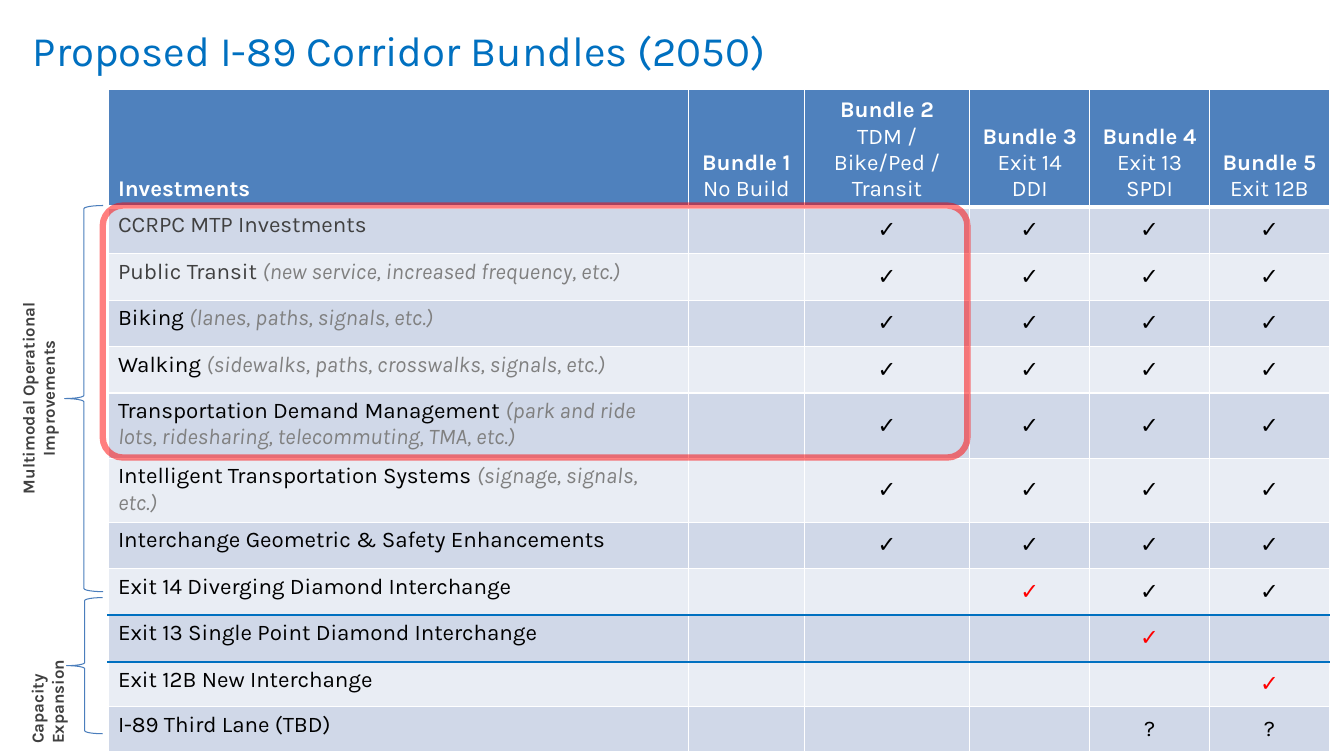
from lxml.etree import SubElement
from pptx import Presentation
from pptx.dml.color import RGBColor
from pptx.enum.shapes import MSO_SHAPE as Preset
from pptx.enum.text import MSO_ANCHOR as Anchor, MSO_AUTO_SIZE as AutoSize, PP_ALIGN as Align
from pptx.oxml.ns import qn
from pptx.util import Cm, Pt

WHITE = RGBColor(0xFF, 0xFF, 0xFF)
BLACK = RGBColor(0x00, 0x00, 0x00)
DARK = RGBColor(0x40, 0x40, 0x40)
GRAY = RGBColor(0x80, 0x80, 0x80)
RED = RGBColor(0xFF, 0x00, 0x00)
BLUE = RGBColor(0x00, 0x70, 0xC0)
HEADER = RGBColor(0x4F, 0x81, 0xBD)
BANDS = RGBColor(0xD0, 0xD8, 0xE8), RGBColor(0xE9, 0xED, 0xF4)
BRACE = RGBColor(0x4B, 0x7E, 0xBC)


def add_span(para, text, color, **formats):
    span = para.add_run()
    span.text = text
    span.font.color.rgb = color
    settings = {"name": "Karla", "size": Pt(16), "bold": False, "italic": False}
    for name, value in (settings | formats).items():
        setattr(span.font, name, value)


def add_border(cell, side, color, width):
    line = SubElement(cell._tc.get_or_add_tcPr(), qn(f"a:ln{side}"), w=str(Pt(width)))
    fill = SubElement(line, qn("a:solidFill"))
    SubElement(fill, qn("a:srgbClr"), val=str(color))


deck = Presentation()
deck.slide_width, deck.slide_height = Cm(33.87), Cm(19.05)
slide = deck.slides.add_slide(deck.slide_layouts[6])

title = slide.shapes.add_textbox(Cm(0.58), Cm(0.56), Cm(27.94), Cm(1.37))
title.text_frame.word_wrap = True
title.text_frame.vertical_anchor = Anchor.MIDDLE
add_span(title.text_frame.paragraphs[0], "Proposed I-89 Corridor Bundles (2050)", BLUE, size=Pt(30))

bundles = ["No Build", "TDM / Bike/Ped / Transit", "Exit 14 DDI", "Exit 13 SPDI", "Exit 12B"]
investments = [
    ("CCRPC MTP Investments", "", DARK, " ✓✓✓✓"),
    ("Public Transit ", "(new service, increased frequency, etc.)", DARK, " ✓✓✓✓"),
    ("Biking ", "(lanes, paths, signals, etc.)", BLACK, " ✓✓✓✓"),
    ("Walking ", "(sidewalks, paths, crosswalks, signals, etc.)", BLACK, " ✓✓✓✓"),
    ("Transportation Demand Management ",
     "(park and ride lots, ridesharing, telecommuting, TMA, etc.)", BLACK, " ✓✓✓✓"),
    ("Intelligent Transportation Systems ", "(signage, signals, etc.)", BLACK, " ✓✓✓✓"),
    ("Interchange Geometric & Safety Enhancements", "", BLACK, " ✓✓✓✓"),
    ("Exit 14 Diverging Diamond Interchange", "", BLACK, "  ✓✓✓"),
    ("Exit 13 Single Point Diamond Interchange", "", BLACK, "   ✓ "),
    ("Exit 12B New Interchange", "", BLACK, "    ✓"),
    ("I-89 Third Lane (TBD)", "", BLACK, "   ??"),
]
red_marks = {(8, 3), (9, 4), (10, 5)}
blue_rules = {8, 9}
widths = [14.63, 2.92, 4.17, 3.02, 3.02, 3.02]
heights = [2.79] + [1.17] * 4 + [1.65] + [1.17] * 4 + [1.14] * 2

table = slide.shapes.add_table(len(heights), len(widths), Cm(2.72), Cm(2.26),
                               Cm(sum(widths)), Cm(sum(heights))).table
for column, width in zip(table.columns, widths):
    column.width = Cm(width)
for index, (row, height) in enumerate(zip(table.rows, heights)):
    row.height = Cm(height)
    top = (BLUE, 1.5) if index - 1 in blue_rules else (WHITE, 3 if index == 1 else 1)
    bottom = (BLUE, 1.5) if index in blue_rules else (WHITE, 3 if index == 0 else 1)
    for cell in row.cells:
        for side, edge in zip("LRTB", ((WHITE, 1), (WHITE, 1), top, bottom)):
            add_border(cell, side, *edge)
        cell.fill.solid()
        cell.fill.fore_color.rgb = BANDS[(index - 1) % 2] if index else HEADER

for cell in table.rows[0].cells:
    cell.vertical_anchor = Anchor.BOTTOM
add_span(table.cell(0, 0).text_frame.paragraphs[0], "Investments", WHITE, bold=True)
for number, description in enumerate(bundles, 1):
    frame = table.cell(0, number).text_frame
    add_span(frame.paragraphs[0], f"Bundle {number}", WHITE, bold=True)
    add_span(frame.add_paragraph(), description, WHITE)
    for para in frame.paragraphs:
        para.alignment = Align.CENTER

for index, (name, detail, color, marks) in enumerate(investments, 1):
    para = table.cell(index, 0).text_frame.paragraphs[0]
    add_span(para, name, color)
    if detail:
        add_span(para, detail, GRAY, italic=True)
    for number, mark in enumerate(marks, 1):
        if mark != " ":
            cell = table.cell(index, number)
            cell.vertical_anchor = Anchor.MIDDLE
            para = cell.text_frame.paragraphs[0]
            para.alignment = Align.CENTER
            add_span(para, mark, RED if (index, number) in red_marks else BLACK)

outlines = [
    (Preset.LEFT_BRACE, (1.63, 5.18, 0.97, 9.73), BRACE, 0.75),
    (Preset.LEFT_BRACE, (1.68, 15.06, 0.91, 3.43), BRACE, 0.75),
    (Preset.ROUNDED_RECTANGLE, (2.59, 5.18, 21.79, 6.35), RED, 4.5),
]
for preset, area, color, width in outlines:
    outline = slide.shapes.add_shape(preset, *map(Cm, area))
    outline.shadow.inherit = False
    outline.fill.background()
    outline.line.color.rgb = color
    outline.line.width = Pt(width)
    if preset == Preset.ROUNDED_RECTANGLE:
        outline.adjustments[0] = 0.08
        tint = outline.line._ln.find(".//" + qn("a:srgbClr"))
        SubElement(tint, qn("a:alpha"), val="50000")

groups = [
    ("Multimodal Operational Improvements", (-2.01, 9.4, 5.94, 1.27), Align.CENTER),
    ("Capacity Expansion", (-1.3, 16.38, 4.47, 0.76), Align.LEFT),
]
for text, area, alignment in groups:
    box = slide.shapes.add_textbox(*map(Cm, area))
    box.rotation = 270
    box.text_frame.word_wrap = True
    box.text_frame.auto_size = AutoSize.SHAPE_TO_FIT_TEXT
    para = box.text_frame.paragraphs[0]
    para.alignment = alignment
    add_span(para, text, DARK, size=Pt(12), bold=True)

deck.save("out.pptx")
